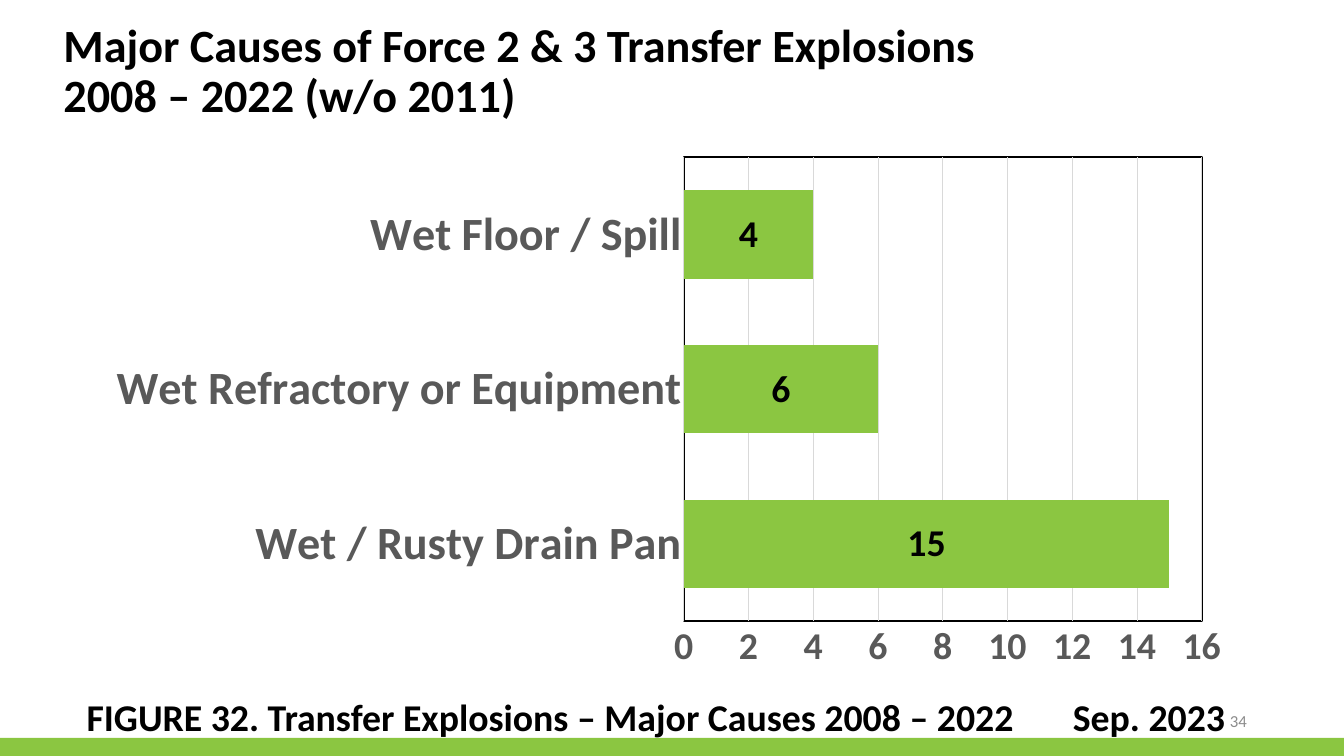
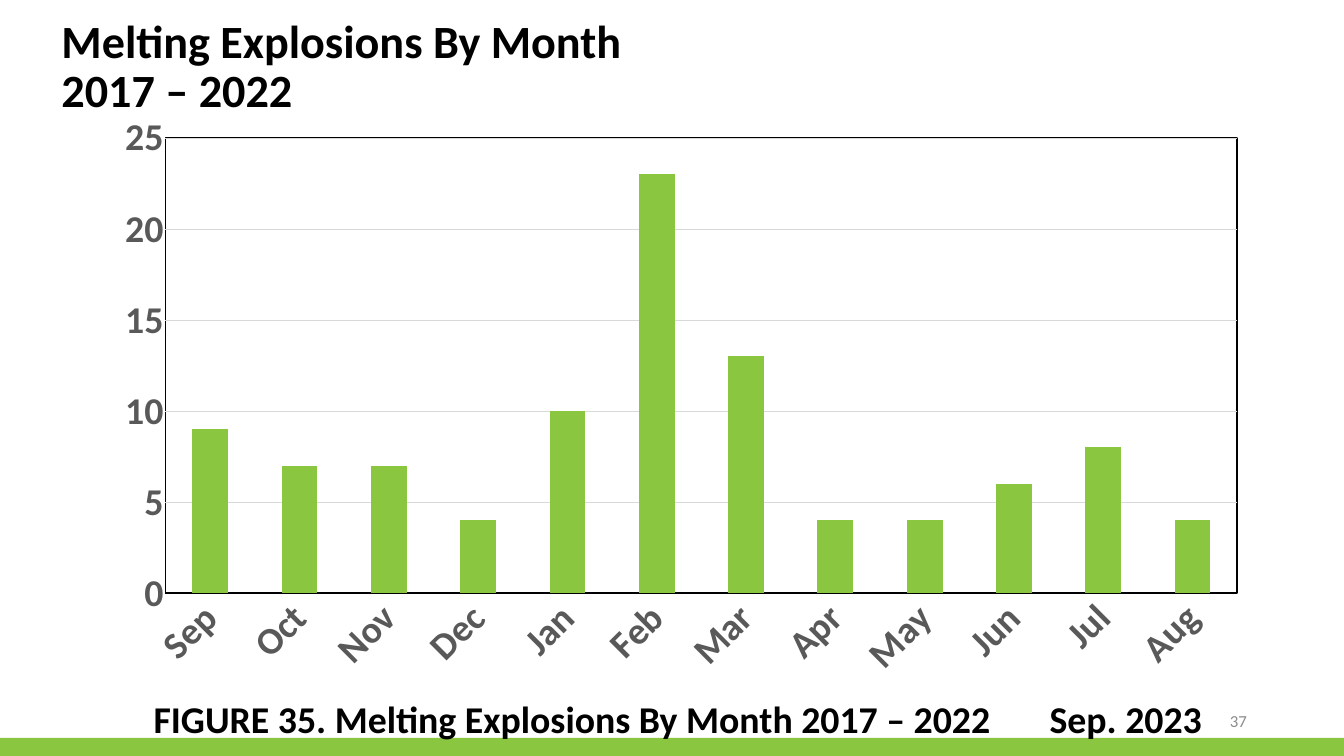
from dataclasses import dataclass

from lxml import etree
from pptx import Presentation
from pptx.chart.axis import CategoryAxis, ValueAxis
from pptx.chart.chart import Chart
from pptx.chart.data import CategoryChartData
from pptx.dml.color import RGBColor
from pptx.enum.chart import XL_CHART_TYPE as ChartKind
from pptx.enum.chart import XL_LABEL_POSITION as LabelPos
from pptx.enum.chart import XL_TICK_MARK as TickMark
from pptx.enum.shapes import MSO_SHAPE as Preset
from pptx.enum.text import MSO_ANCHOR as Anchor
from pptx.enum.text import PP_ALIGN as Align
from pptx.oxml import parse_xml
from pptx.oxml.ns import nsdecls, qn
from pptx.slide import Slide
from pptx.text.text import Font
from pptx.util import Inches, Pt

GREEN = RGBColor(0x8B, 0xC6, 0x41)
BLACK = RGBColor(0x00, 0x00, 0x00)
AXIS_GRAY = RGBColor(0x59, 0x59, 0x59)
GRID_GRAY = RGBColor(0xD9, 0xD9, 0xD9)
PAGE_GRAY = RGBColor(0x8C, 0x8C, 0x8C)
FACE = "Calibri"
ISSUE_DATE = "Sep. 2023"
SLIDE_W, SLIDE_H, BAND_H = 26.67, 15, 0.36

Box = tuple[float, float, float, float]  # left, top, width, height


@dataclass(frozen=True)
class Figure:
    page: int
    title: list[str]
    title_box: Box
    caption: str
    caption_box: Box
    date_tab: float
    kind: ChartKind
    chart_box: Box
    plot_box: Box  # fractions of the chart
    counts: dict[str, int]
    category_size: int
    axis_max: int
    axis_step: int
    gap: int
    overlap: int = 0
    axis_line: tuple[RGBColor, float] = (GRID_GRAY, 0.75)
    slanted: bool = False
    labelled: bool = False


FIGURES = [
    Figure(
        page=34,
        title=["Major Causes of Force 2 & 3 Transfer Explosions",
               "2008 – 2022 (w/o 2011)"],
        title_box=(1.16, 0.4, 18.8, 1.39),
        caption="FIGURE 32. Transfer Explosions – Major Causes 2008 – 2022",
        caption_box=(1.62, 13.82, 24.23, 1.1),
        date_tab=19.57,
        kind=ChartKind.BAR_CLUSTERED,
        chart_box=(1.92, 2.91, 22.84, 10.58),
        plot_box=(0.51, 0.02, 0.45, 0.87),
        counts={"Wet / Rusty Drain Pan": 15,
                "Wet Refractory or Equipment": 6,
                "Wet Floor / Spill": 4},
        category_size=66, axis_max=16, axis_step=2, gap=75, labelled=True,
    ),
    Figure(
        page=37,
        title=["Melting Explosions By Month", "2017 – 2022"],
        title_box=(1.12, 0.31, 11.91, 1.39),
        caption="FIGURE 35. Melting Explosions By Month 2017 – 2022",
        caption_box=(2.95, 13.85, 21.18, 1.1),
        date_tab=17.78,
        kind=ChartKind.COLUMN_CLUSTERED,
        chart_box=(1.35, 2.14, 24.17, 11.89),
        plot_box=(0.08, 0.05, 0.88, 0.76),
        counts={"Sep": 9, "Oct": 7, "Nov": 7, "Dec": 4, "Jan": 10, "Feb": 23,
                "Mar": 13, "Apr": 4, "May": 4, "Jun": 6, "Jul": 8, "Aug": 4},
        category_size=54, axis_max=25, axis_step=5, gap=150, overlap=-27,
        axis_line=(BLACK, 3.5), slanted=True,
    ),
]


def style(font: Font, size: float, color: RGBColor, bold: bool = True) -> None:
    font.name, font.size, font.bold = FACE, Pt(size), bold
    font.color.rgb = color


def add_text(slide: Slide, box: Box, lines: list[str], size: float,
             color: RGBColor = BLACK, bold: bool = True,
             align: Align = Align.LEFT, anchor: Anchor = Anchor.TOP,
             spacing: float = 0.9, tab: float | None = None) -> None:
    frame = slide.shapes.add_textbox(*map(Inches, box)).text_frame
    frame.word_wrap = True
    frame.vertical_anchor = anchor
    for index, line in enumerate(lines):
        paragraph = frame.add_paragraph() if index else frame.paragraphs[0]
        paragraph.text = line
        paragraph.alignment = align
        paragraph.line_spacing = spacing
        if tab is not None:
            tabs = etree.SubElement(paragraph._p.get_or_add_pPr(), qn("a:tabLst"))
            etree.SubElement(tabs, qn("a:tab"), pos=str(Inches(tab)), algn="l")
        style(paragraph.font, size, color, bold)


def frame_plot(chart: Chart, plot_box: Box) -> None:
    """Place the inner plot area and give it a white fill and black outline."""
    area = chart._chartSpace.chart.plotArea
    for old in area.findall(qn("c:layout")):
        area.remove(old)
    places = "".join(f'<c:{key} val="{value}"/>'
                     for key, value in zip("xywh", plot_box))
    area.insert(0, parse_xml(
        f'<c:layout {nsdecls("c")}><c:manualLayout>'
        '<c:layoutTarget val="inner"/><c:xMode val="edge"/><c:yMode val="edge"/>'
        f'{places}</c:manualLayout></c:layout>'))
    area.append(parse_xml(
        f'<c:spPr {nsdecls("c", "a")}>'
        '<a:solidFill><a:srgbClr val="FFFFFF"/></a:solidFill>'
        f'<a:ln w="{Pt(2.5)}"><a:solidFill><a:srgbClr val="{BLACK}"/></a:solidFill>'
        '</a:ln></c:spPr>'))


def style_axis(axis: CategoryAxis | ValueAxis, size: int) -> None:
    axis.major_tick_mark = axis.minor_tick_mark = TickMark.NONE
    style(axis.tick_labels.font, size, AXIS_GRAY)


def add_figure_chart(slide: Slide, figure: Figure) -> None:
    data = CategoryChartData()
    data.categories = list(figure.counts)
    data.add_series("Series 1", list(figure.counts.values()))
    chart = slide.shapes.add_chart(
        figure.kind, *map(Inches, figure.chart_box), data).chart
    chart.has_legend = chart.has_title = False
    style(chart.font, 10, BLACK, bold=False)
    frame_plot(chart, figure.plot_box)

    # Bars
    bars = chart.plots[0]
    bars.vary_by_categories = False
    bars.gap_width, bars.overlap = figure.gap, figure.overlap
    explosions = bars.series[0]
    explosions.format.fill.solid()
    explosions.format.fill.fore_color.rgb = GREEN
    if figure.labelled:
        labels = explosions.data_labels
        labels.show_value = True
        labels.position = LabelPos.CENTER
        style(labels.font, 54, BLACK)

    # Category axis
    causes = chart.category_axis
    style_axis(causes, figure.category_size)
    causes.has_major_gridlines = False
    line_color, line_width = figure.axis_line
    causes.format.line.color.rgb = line_color
    causes.format.line.width = Pt(line_width)
    if figure.slanted:
        causes._element.find(qn("c:txPr")).find(qn("a:bodyPr")).set("rot", "-2700000")

    # Value axis
    scale = chart.value_axis
    style_axis(scale, 54)
    scale.minimum_scale, scale.maximum_scale = 0, figure.axis_max
    scale.major_unit = figure.axis_step
    scale.format.line.fill.background()
    scale.has_major_gridlines = True
    scale.major_gridlines.format.line.color.rgb = GRID_GRAY
    scale.major_gridlines.format.line.width = Pt(0.75)


def add_footer(slide: Slide, page: int) -> None:
    band = slide.shapes.add_shape(
        Preset.RECTANGLE, 0, Inches(SLIDE_H - BAND_H), Inches(SLIDE_W), Inches(BAND_H))
    band.shadow.inherit = False
    band.fill.solid()
    band.fill.fore_color.rgb = GREEN
    band.line.fill.background()
    add_text(slide, (18.84, 13.9, 6, 0.8), [str(page)], 24, PAGE_GRAY, bold=False,
             align=Align.RIGHT, anchor=Anchor.MIDDLE, spacing=1.0)


def main() -> None:
    deck = Presentation()
    deck.slide_width, deck.slide_height = Inches(SLIDE_W), Inches(SLIDE_H)
    for figure in FIGURES:
        slide = deck.slides.add_slide(deck.slide_layouts[6])
        add_footer(slide, figure.page)
        add_text(slide, figure.title_box, figure.title, 66)
        add_text(slide, figure.caption_box, [f"{figure.caption}\t{ISSUE_DATE}"], 54,
                 tab=figure.date_tab)
        add_figure_chart(slide, figure)
    deck.save("out.pptx")


if __name__ == "__main__":
    main()
